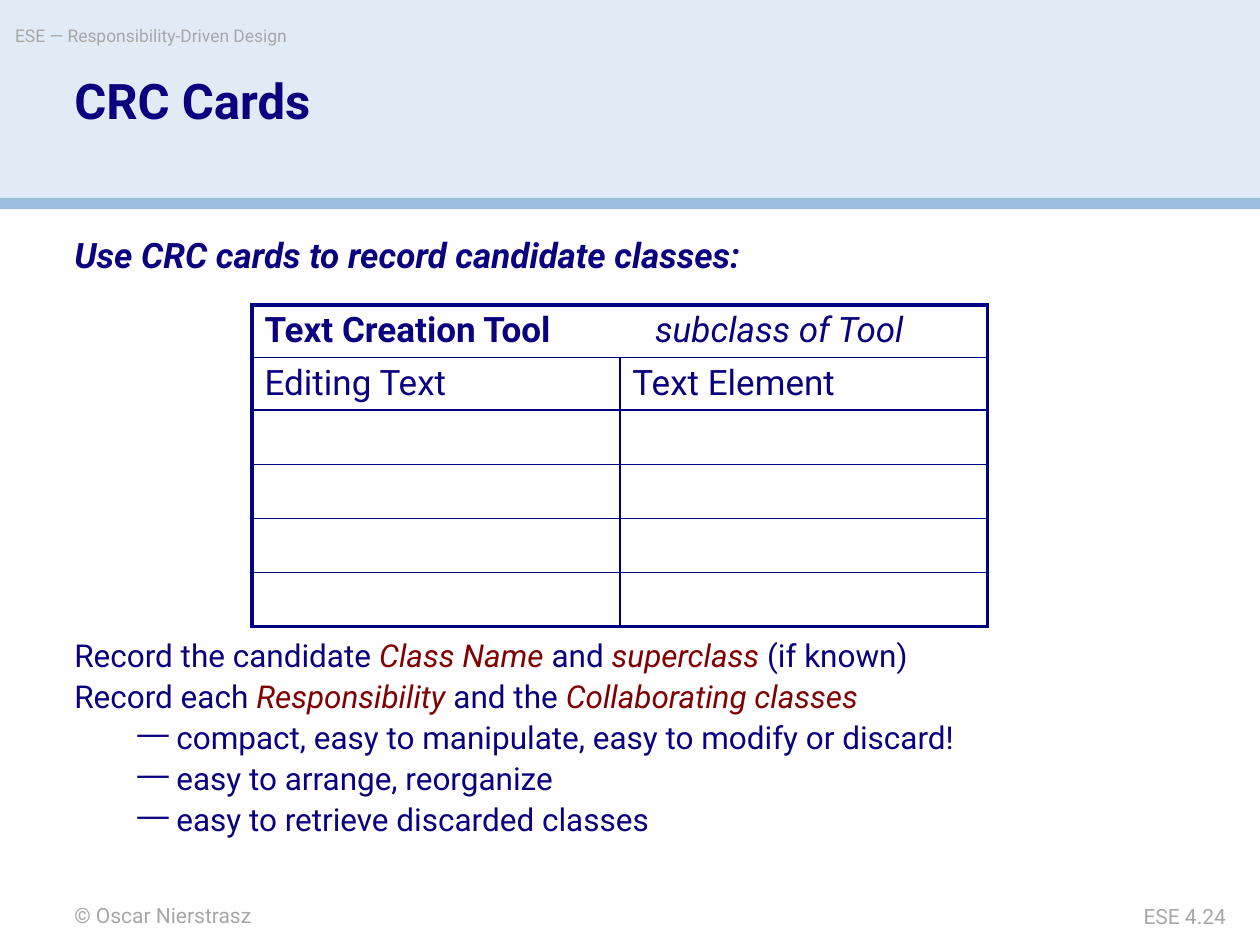
"""Builds a slide that explains CRC cards with a sample card."""
from lxml.etree import SubElement
from pptx import Presentation
from pptx.dml.color import RGBColor
from pptx.enum.shapes import MSO_SHAPE as Shape
from pptx.enum.text import MSO_ANCHOR as Anchor, PP_ALIGN as Align
from pptx.oxml.ns import qn
from pptx.util import Inches, Pt

NAVY = RGBColor(0x0A, 0x01, 0x7F)
BORDER = RGBColor(0x00, 0x02, 0x7F)
MAROON = RGBColor(0x7F, 0x01, 0x01)
GRAY = RGBColor(0xA7, 0xA7, 0xA7)
PALE_BLUE = RGBColor(0xE1, 0xEB, 0xF5)
MID_BLUE = RGBColor(0x9C, 0xBD, 0xDE)

MARGIN, CONTENT_WIDTH = 0.59, 8.83
CARD_ROWS = [0.41, 0.41, 0.43, 0.43, 0.43, 0.43]


class SlideBuilder:
    """Holds the text style and the current slide."""

    font_name = "Roboto"
    thick, thin = 2.25, 1

    def __init__(self, slide):
        self.slide = slide

    def band(self, top, height, color):
        shape = self.slide.shapes.add_shape(
            Shape.RECTANGLE, 0, Inches(top), Inches(10), Inches(height))
        shape.shadow.inherit = False
        shape.fill.solid()
        shape.fill.fore_color.rgb = color
        shape.line.fill.background()

    def run(self, paragraph, text, size, color=NAVY, bold=False, italic=False):
        run = paragraph.add_run()
        run.text = text
        font = run.font
        font.name, font.size = self.font_name, Pt(size)
        font.bold, font.italic = bold, italic
        font.color.rgb = color

    def text_box(self, left, top, width, height):
        box = self.slide.shapes.add_textbox(*map(Inches, (left, top, width, height)))
        frame = box.text_frame
        frame.word_wrap = True
        frame.margin_left = frame.margin_top = 0
        frame.margin_right = frame.margin_bottom = 0
        return frame

    def label(self, place, text, size, color=NAVY, align=Align.LEFT,
              spacing=1.0, **style):
        paragraph = self.text_box(*place).paragraphs[0]
        paragraph.alignment = align
        paragraph.line_spacing = spacing
        self.run(paragraph, text, size, color, **style)

    def notes(self, place, statements, points, size=18):
        frame = self.text_box(*place)
        for index, parts in enumerate(statements + [[point] for point in points]):
            paragraph = frame.add_paragraph() if index else frame.paragraphs[0]
            paragraph.line_spacing = 0.9
            paragraph.space_after = Pt(4)
            for position, text in enumerate(parts):
                term = position % 2 == 1
                self.run(paragraph, text, size, MAROON if term else NAVY, italic=term)
            if index >= len(statements):
                self.bullet(paragraph, "—")

    def bullet(self, paragraph, character):
        properties = paragraph._p.get_or_add_pPr()
        properties.set("marL", str(Inches(0.81)))
        properties.set("indent", str(Inches(-0.31)))
        SubElement(properties, qn("a:buChar"), char=character)

    def card(self, left, top, column_width, row_heights):
        frame = self.slide.shapes.add_table(
            len(row_heights), 2, Inches(left), Inches(top),
            Inches(2 * column_width), Inches(sum(row_heights)))
        table = frame.table
        table.first_row = table.horz_banding = False
        for column in table.columns:
            column.width = Inches(column_width)
        last = len(row_heights) - 1
        for index, height in enumerate(row_heights):
            table.rows[index].height = Inches(height)
            for side in range(2):
                edges = {"L": side == 0, "R": side == 1 or index == 0,
                         "T": index == 0, "B": index == last}
                cell = table.cell(index, side)
                self.borders(cell, edges)
                cell.fill.background()
        table.cell(0, 0).merge(table.cell(0, 1))
        return table

    def borders(self, cell, edges):
        properties = cell._tc.get_or_add_tcPr()
        for edge, outer in edges.items():
            width = Pt(self.thick if outer else self.thin)
            line = SubElement(properties, qn(f"a:ln{edge}"), w=str(width))
            fill = SubElement(line, qn("a:solidFill"))
            SubElement(fill, qn("a:srgbClr"), val=str(BORDER))

    def cell_text(self, cell, text, size=20, **style):
        cell.vertical_anchor = Anchor.TOP
        paragraph = cell.text_frame.paragraphs[0]
        paragraph.line_spacing = 0.95
        self.run(paragraph, text, size, **style)
        return paragraph

    def tab_stop(self, paragraph, position):
        tabs = SubElement(paragraph._p.get_or_add_pPr(), qn("a:tabLst"))
        SubElement(tabs, qn("a:tab"), pos=str(Inches(position)), algn="l")


def main():
    presentation = Presentation()
    presentation.slide_width, presentation.slide_height = Inches(10), Inches(7.5)
    slide = presentation.slides.add_slide(presentation.slide_layouts[6])
    builder = SlideBuilder(slide)

    builder.band(0, 1.58, PALE_BLUE)
    builder.band(1.57, 0.09, MID_BLUE)
    builder.label((0.12, 0.2, 5.9, 0.28), "ESE — Responsibility-Driven Design", 10, GRAY)
    builder.label((MARGIN, 7.16, 4.17, 0.2), "© Oscar Nierstrasz", 12, GRAY)
    builder.label((8.25, 7.17, 1.48, 0.2), "ESE 4.24", 12, GRAY, Align.RIGHT)
    builder.label((MARGIN, 0.61, CONTENT_WIDTH, 0.89), "CRC Cards", 28,
                  spacing=0.9, bold=True)
    builder.label((MARGIN, 1.89, CONTENT_WIDTH, 0.35),
                  "Use CRC cards to record candidate classes:", 20,
                  spacing=0.9, bold=True, italic=True)

    card = builder.card(2, 2.42, 2.92, CARD_ROWS)
    heading = builder.cell_text(card.cell(0, 0), "Text Creation Tool\t", bold=True)
    builder.run(heading, "subclass of Tool", 20, italic=True)
    builder.tab_stop(heading, 3.1)
    for column, text in enumerate(["Editing Text", "Text Element"]):
        builder.cell_text(card.cell(1, column), text)

    builder.notes(
        (MARGIN, 5.08, CONTENT_WIDTH, 1.65),
        [["Record the candidate ", "Class Name", " and ", "superclass", " (if known)"],
         ["Record each ", "Responsibility", " and the ", "Collaborating classes"]],
        ["compact, easy to manipulate, easy to modify or discard!",
         "easy to arrange, reorganize",
         "easy to retrieve discarded classes"])

    presentation.save("out.pptx")


if __name__ == "__main__":
    main()
